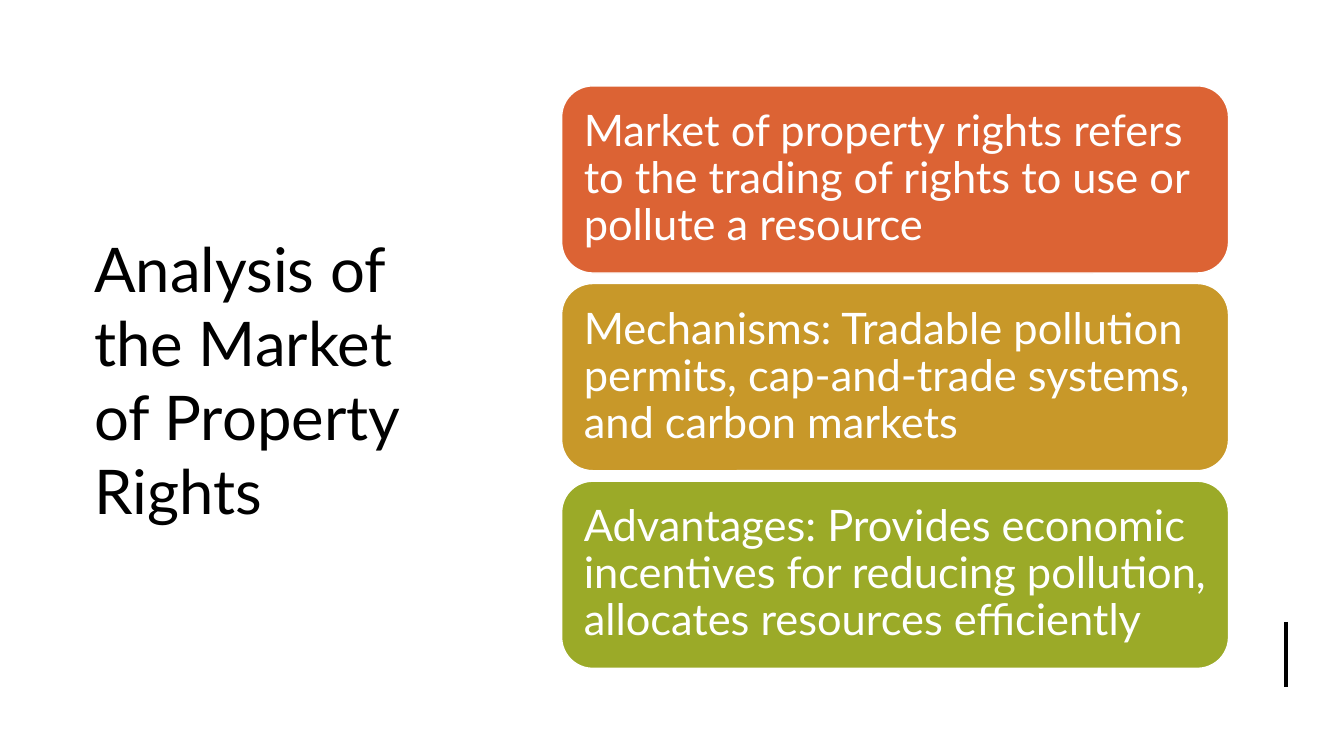
from pptx import Presentation
from pptx.dml.color import RGBColor
from pptx.enum.shapes import MSO_CONNECTOR, MSO_SHAPE
from pptx.enum.text import MSO_ANCHOR, MSO_AUTO_SIZE, PP_ALIGN
from pptx.oxml.ns import qn
from pptx.util import Pt
from lxml.etree import SubElement

# Content
TITLE = "Analysis of the Market of Property Rights"
CARDS = [
    ("Market of property rights refers to the trading of rights to use or "
     "pollute a resource", "DC6334"),
    ("Mechanisms: Tradable pollution permits, cap-and-trade systems, and "
     "carbon markets", "C89829"),
    ("Advantages: Provides economic incentives for reducing pollution, "
     "allocates resources efficiently", "9BAA28"),
]
FONT = "Lato"

# Layout in points
CARD_LEFT, CARD_TOP = 401.2, 61.3
CARD_WIDTH, CARD_HEIGHT, CARD_GAP = 476.4, 133.7, 7.5
CARD_MARGIN = 9.3


def color(value):
    return RGBColor.from_string(value)


def write(frame, text, size, text_color):
    frame.text = text
    frame.word_wrap = True
    frame.auto_size = MSO_AUTO_SIZE.NONE
    frame.vertical_anchor = MSO_ANCHOR.MIDDLE
    para = frame.paragraphs[0]
    para.alignment = PP_ALIGN.LEFT
    font = para.runs[0].font
    font.name = FONT
    font.size = Pt(size)
    font.color.rgb = color(text_color)
    return para


deck = Presentation()
deck.slide_width, deck.slide_height = Pt(960), Pt(540)
page = deck.slides.add_slide(deck.slide_layouts[5])

# Title
title = page.shapes.title
title.left, title.top = Pt(60), Pt(67.7)
title.width, title.height = Pt(271.4), Pt(406)
write(title.text_frame, TITLE, 44, "000000")

# Accent line at the lower right
accent = page.shapes.add_connector(
    MSO_CONNECTOR.STRAIGHT, Pt(918.7), Pt(444.2), Pt(918.7), Pt(491))
accent.line.color.rgb = color("000000")
accent.line.width = Pt(3)
SubElement(accent._element.spPr, qn("a:effectLst"))

# Stacked cards
for index, (text, fill) in enumerate(CARDS):
    top = CARD_TOP + index * (CARD_HEIGHT + CARD_GAP)
    card = page.shapes.add_shape(
        MSO_SHAPE.ROUNDED_RECTANGLE,
        Pt(CARD_LEFT), Pt(top), Pt(CARD_WIDTH), Pt(CARD_HEIGHT))
    card.shadow.inherit = False
    card.fill.solid()
    card.fill.fore_color.rgb = color(fill)
    card.line.color.rgb = color("FFFFFF")
    card.line.width = Pt(1)
    frame = card.text_frame
    frame.margin_left = frame.margin_right = Pt(CARD_MARGIN)
    frame.margin_top = frame.margin_bottom = Pt(CARD_MARGIN)
    write(frame, text, 31, "FFFFFF").line_spacing = 0.9

deck.save("out.pptx")
